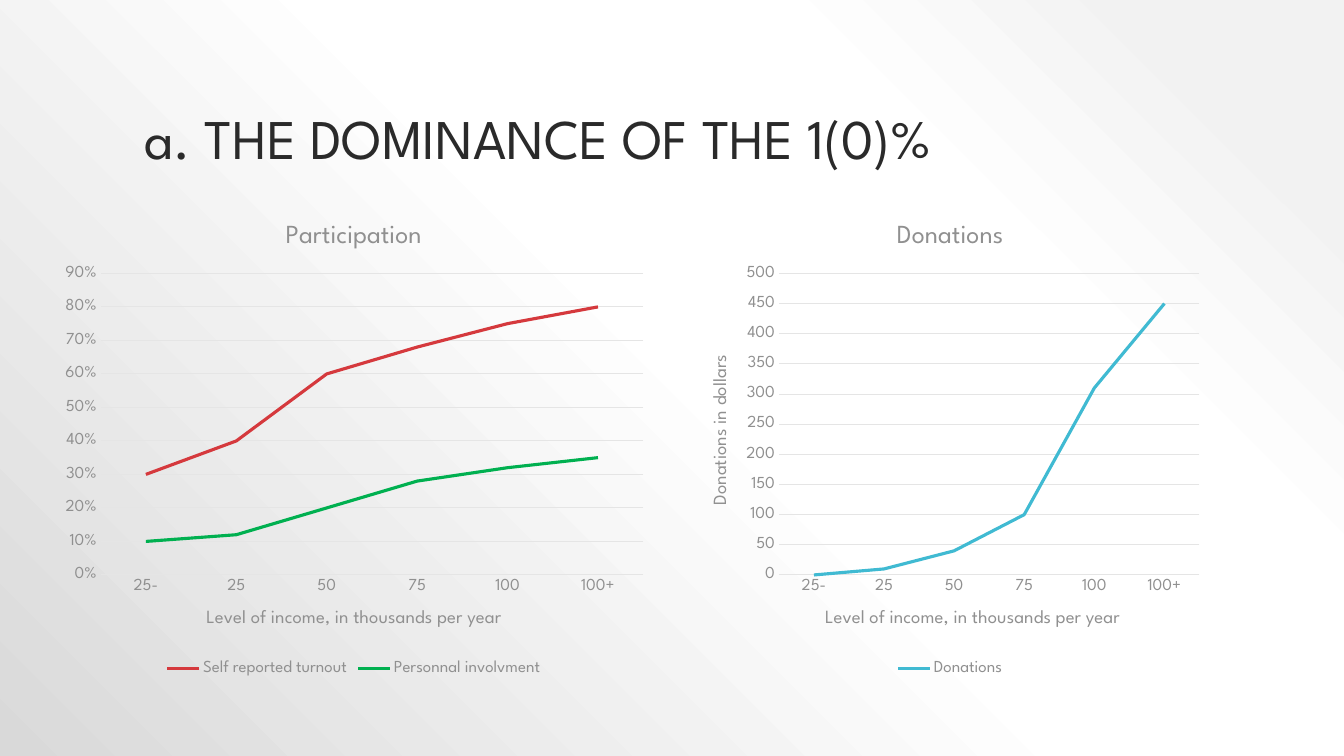
import pptx
import pptx.chart.data
import pptx.dml.color
import pptx.enum.chart
import pptx.enum.text
import pptx.oxml
import pptx.oxml.ns
import pptx.util
from dataclasses import dataclass

Inches = pptx.util.Inches
Pt = pptx.util.Pt


@dataclass(frozen=True)
class Theme:
    font: str = "League Spartan"
    ink: str = "2A2A2A"
    grey: str = "909090"
    grid: str = "E5E5E5"
    red: str = "D5393D"
    green: str = "00B050"
    blue: str = "40BAD2"
    backdrop: tuple = ((10, "F2F2F2"), (28, "FFFFFF"), (48, "FFFFFF"), (100, "D9D9D9"))
    title_size: float = 40
    chart_title_size: float = 18.6
    axis_title_size: float = 13.3
    label_size: float = 12


THEME = Theme()
INCOMES = ("25-", "25", "50", "75", "100", "100+")
INCOME_TITLE = "Level of income, in thousands per year"


def rgb(color):
    return pptx.dml.color.RGBColor.from_string(color)


def set_font(font, size, color=THEME.grey):
    font.name = THEME.font
    font.size = Pt(size)
    font.bold = False
    font.color.rgb = rgb(color)


def set_line(line, color, width):
    line.color.rgb = rgb(color)
    line.width = Pt(width)


def set_title(owner, text, size):
    """Title of a chart or of an axis."""
    tf = (owner.chart_title if hasattr(owner, "chart_title") else owner.axis_title).text_frame
    tf.text = text
    set_font(tf.paragraphs[0].font, size)


def add_backdrop(s):
    """Radial gradient centred on the top right corner."""
    s.background.fill.gradient()
    stops = "".join(f'<a:gs pos="{pos * 1000}"><a:srgbClr val="{color}"/></a:gs>'
                    for pos, color in THEME.backdrop)
    grad = pptx.oxml.parse_xml(
        f'<a:gradFill {pptx.oxml.ns.nsdecls("a")} rotWithShape="1"><a:gsLst>{stops}</a:gsLst>'
        '<a:path path="circle"><a:fillToRect l="100000" b="100000"/></a:path></a:gradFill>')
    old = s._element.find(".//" + pptx.oxml.ns.qn("a:gradFill"))
    old.getparent().replace(old, grad)


def add_heading(s, text, x, y, w, h):
    sp = s.shapes.title
    sp.left, sp.top, sp.width, sp.height = (Inches(v) for v in (x, y, w, h))
    tf = sp.text_frame
    tf.text = text
    tf.word_wrap = True
    tf.auto_size = pptx.enum.text.MSO_AUTO_SIZE.NONE
    tf.vertical_anchor = pptx.enum.text.MSO_ANCHOR.BOTTOM
    p = tf.paragraphs[0]
    p.alignment = pptx.enum.text.PP_ALIGN.LEFT
    p.line_spacing = 0.9
    set_font(p.font, THEME.title_size, THEME.ink)


def set_plot_area(chart, x, y, w, h):
    """Inner plot area, in fractions of the chart box."""
    plot_area = chart._chartSpace.chart.plotArea
    for layout in plot_area.findall(pptx.oxml.ns.qn("c:layout")):
        plot_area.remove(layout)
    sizes = "".join(f'<c:{tag} val="{v}"/>' for tag, v in zip("xywh", (x, y, w, h)))
    plot_area.insert(0, pptx.oxml.parse_xml(
        f'<c:layout {pptx.oxml.ns.nsdecls("c")}><c:manualLayout><c:layoutTarget val="inner"/>'
        f'<c:xMode val="edge"/><c:yMode val="edge"/>{sizes}</c:manualLayout></c:layout>'))


def add_income_chart(s, box, plot, title, series, top, step, fmt, value_title=None):
    """Line chart over income levels; series holds (name, colour, values)."""
    data = pptx.chart.data.CategoryChartData(number_format=fmt)
    data.categories = INCOMES
    for name, _, values in series:
        data.add_series(name, values)
    chart = s.shapes.add_chart(pptx.enum.chart.XL_CHART_TYPE.LINE,
                               *(Inches(v) for v in box), data).chart
    set_font(chart.font, THEME.label_size)
    chart.has_title = True
    set_title(chart, title, THEME.chart_title_size)
    set_plot_area(chart, *plot)

    # Legend
    chart.has_legend = True
    chart.legend.position = pptx.enum.chart.XL_LEGEND_POSITION.BOTTOM
    chart.legend.include_in_layout = False
    set_font(chart.legend.font, THEME.label_size)

    # Axes
    income, value = chart.category_axis, chart.value_axis
    for axis in (income, value):
        axis.major_tick_mark = axis.minor_tick_mark = pptx.enum.chart.XL_TICK_MARK.NONE
        set_font(axis.tick_labels.font, THEME.label_size)
    set_line(income.format.line, THEME.grid, 0.75)
    set_title(income, INCOME_TITLE, THEME.axis_title_size)
    value.format.line.fill.background()
    value.has_major_gridlines = True
    set_line(value.major_gridlines.format.line, THEME.grid, 0.75)
    value.minimum_scale, value.maximum_scale, value.major_unit = 0, top, step
    value.tick_labels.number_format = fmt
    value.tick_labels.number_format_is_linked = False
    if value_title:
        set_title(value, value_title, THEME.axis_title_size)

    # Lines
    chart.plots[0].vary_by_categories = False
    for line, (_, color, _) in zip(chart.plots[0].series, series):
        line.smooth = False
        line.marker.style = pptx.enum.chart.XL_MARKER_STYLE.NONE
        set_line(line.format.line, color, 2.25)


def build_dominance_slide(prs):
    s = prs.slides.add_slide(prs.slide_layouts[5])
    add_backdrop(s)
    add_heading(s, "a. THE DOMINANCE OF THE 1(0)%", 1.33, 0.3, 10.67, 1.45)
    add_income_chart(
        s, (0.52, 2, 5.98, 4.75), (0.08, 0.15, 0.9, 0.63), "Participation",
        [("Self reported turnout", THEME.red, (0.3, 0.4, 0.6, 0.68, 0.75, 0.8)),
         ("Personnal involvment", THEME.green, (0.1, 0.12, 0.2, 0.28, 0.32, 0.35))],
        top=0.9, step=0.1, fmt="0%")
    add_income_chart(
        s, (6.85, 2, 5.15, 4.75), (0.17, 0.15, 0.81, 0.63), "Donations",
        [("Donations", THEME.blue, (0, 10, 40, 100, 310, 450))],
        top=500, step=50, fmt="General", value_title="Donations in dollars")


def main():
    prs = pptx.Presentation()
    prs.slide_width, prs.slide_height = Inches(13.33), Inches(7.5)
    build_dominance_slide(prs)
    prs.save("out.pptx")


if __name__ == "__main__":
    main()
